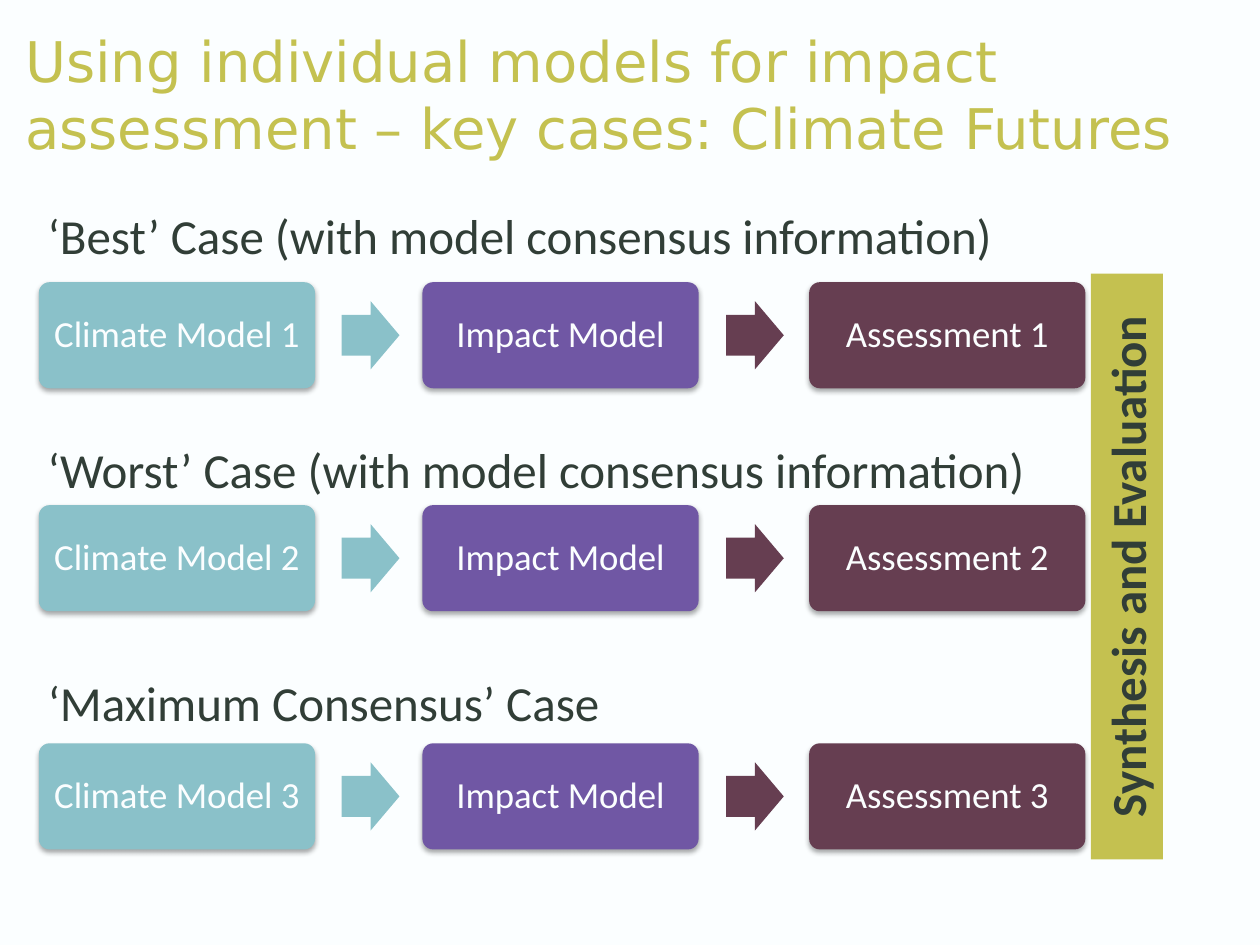
"""Build the slide on using individual climate models for impact assessment."""
from dataclasses import dataclass

import lxml.etree
import pptx
import pptx.dml.color
import pptx.enum.shapes
import pptx.enum.text
import pptx.oxml
import pptx.oxml.ns
import pptx.util

Pt = pptx.util.Pt
RGBColor = pptx.dml.color.RGBColor
MSO_SHAPE = pptx.enum.shapes.MSO_SHAPE
MSO_ANCHOR = pptx.enum.text.MSO_ANCHOR
MSO_AUTO_SIZE = pptx.enum.text.MSO_AUTO_SIZE
PP_ALIGN = pptx.enum.text.PP_ALIGN

PALE = RGBColor(0xFB, 0xFE, 0xFF)
OLIVE = RGBColor(0xC4, 0xC1, 0x50)
TEAL = RGBColor(0x8A, 0xC1, 0xC9)
PURPLE = RGBColor(0x70, 0x57, 0xA4)
PLUM = RGBColor(0x66, 0x3E, 0x51)
DARK = RGBColor(0x31, 0x3E, 0x37)

SHADOW = (
    f'<a:effectLst {pptx.oxml.ns.nsdecls("a")}>'
    '<a:outerShdw blurRad="39370" dist="22860" dir="5400000" rotWithShape="0">'
    '<a:srgbClr val="000000"><a:alpha val="35000"/></a:srgbClr>'
    "</a:outerShdw></a:effectLst>"
)


@dataclass
class Case:
    caption: str
    caption_top: float
    caption_width: float
    row_top: float


@dataclass
class Step:
    label: str
    left: float
    color: RGBColor


@dataclass
class Arrow:
    left: float
    color: RGBColor


CASES = [
    Case("‘Best’ Case (with model consensus information)", 113.8, 640.8, 161.3),
    Case("‘Worst’ Case (with model consensus information)", 247.5, 604, 288.7),
    Case("‘Maximum Consensus’ Case", 381, 337.7, 424.8),
]
STEPS = [
    Step("Climate Model {}", 22.2, TEAL),
    Step("Impact Model", 241.4, PURPLE),
    Step("Assessment {}", 462.4, PLUM),
]
ARROWS = [Arrow(195.3, TEAL), Arrow(414.9, PLUM)]
BOX_WIDTH, BOX_HEIGHT = 157.8, 60.6
ARROW_WIDTH, ARROW_HEIGHT = 33, 39


def add_run(p, text: str, size: float, color: RGBColor,
            font: str = "Calibri", bold: bool = False) -> None:
    r = p.add_run()
    r.text = text
    r.font.name = font
    r.font.size = Pt(size)
    r.font.bold = bold
    r.font.color.rgb = color


def set_margins(tf, margin: float) -> None:
    tf.margin_left = tf.margin_right = tf.margin_top = tf.margin_bottom = Pt(margin)


def add_filled(shapes, kind: MSO_SHAPE, left: float, top: float,
               width: float, height: float, color: RGBColor):
    sp = shapes.add_shape(kind, Pt(left), Pt(top), Pt(width), Pt(height))
    sp.shadow.inherit = False
    sp.fill.solid()
    sp.fill.fore_color.rgb = color
    sp.line.fill.background()
    return sp


def add_step(shapes, step: Step, number: int, top: float) -> None:
    sp = add_filled(shapes, MSO_SHAPE.ROUNDED_RECTANGLE, step.left, top,
                    BOX_WIDTH, BOX_HEIGHT, step.color)
    sp.adjustments[0] = 0.1
    effects = sp._element.spPr.find(pptx.oxml.ns.qn("a:effectLst"))
    effects.getparent().replace(effects, pptx.oxml.parse_xml(SHADOW))
    tf = sp.text_frame
    tf.word_wrap = True
    tf.vertical_anchor = MSO_ANCHOR.MIDDLE
    set_margins(tf, 6.5)
    p = tf.paragraphs[0]
    p.alignment = PP_ALIGN.CENTER
    p.line_spacing = 0.9
    add_run(p, step.label.format(number), 21, PALE)


def add_arrow(shapes, arrow: Arrow, row_top: float) -> None:
    top = row_top + (BOX_HEIGHT - ARROW_HEIGHT) / 2
    sp = add_filled(shapes, MSO_SHAPE.RIGHT_ARROW, arrow.left, top,
                    ARROW_WIDTH, ARROW_HEIGHT, arrow.color)
    sp.adjustments[0] = 0.6
    sp.adjustments[1] = 0.5


def add_case(s, case: Case, number: int) -> None:
    shapes = s.shapes.add_group_shape().shapes
    for step in STEPS:
        add_step(shapes, step, number, case.row_top)
    for arrow in ARROWS:
        add_arrow(shapes, arrow, case.row_top)
    sp = s.shapes.add_textbox(Pt(20.2), Pt(case.caption_top),
                              Pt(case.caption_width), Pt(41.2))
    tf = sp.text_frame
    tf.word_wrap = True
    tf.auto_size = MSO_AUTO_SIZE.SHAPE_TO_FIT_TEXT
    add_run(tf.paragraphs[0], case.caption, 28, DARK)


def add_title(s, text: str) -> None:
    sp = s.shapes.title
    sp.left, sp.top, sp.width, sp.height = Pt(14.4), Pt(15.1), Pt(705.6), Pt(79.2)
    tf = sp.text_frame
    tf.auto_size = MSO_AUTO_SIZE.NONE
    tf.vertical_anchor = MSO_ANCHOR.TOP
    set_margins(tf, 0)
    p = tf.paragraphs[0]
    p.alignment = PP_ALIGN.LEFT
    add_run(p, text, 32, OLIVE, "DejaVu Sans")


def add_synthesis_bar(s, text: str) -> None:
    sp = add_filled(s.shapes, MSO_SHAPE.RECTANGLE, 476.6, 303.1, 334.8, 41.2, OLIVE)
    sp.rotation = 270
    tf = sp.text_frame
    tf.word_wrap = True
    tf.auto_size = MSO_AUTO_SIZE.SHAPE_TO_FIT_TEXT
    tf.vertical_anchor = MSO_ANCHOR.TOP
    p = tf.paragraphs[0]
    p.alignment = PP_ALIGN.CENTER
    add_run(p, text, 28, DARK, bold=True)


def main() -> None:
    prs = pptx.Presentation()
    prs.slide_width, prs.slide_height = Pt(720), Pt(540)
    s = prs.slides.add_slide(prs.slide_layouts[5])
    s.background.fill.solid()
    s.background.fill.fore_color.rgb = PALE
    add_title(s, "Using individual models for impact assessment – key cases: Climate Futures")
    for number, case in enumerate(CASES, start=1):
        add_case(s, case, number)
    add_synthesis_bar(s, "Synthesis and Evaluation")
    prs.save("out.pptx")


if __name__ == "__main__":
    main()
